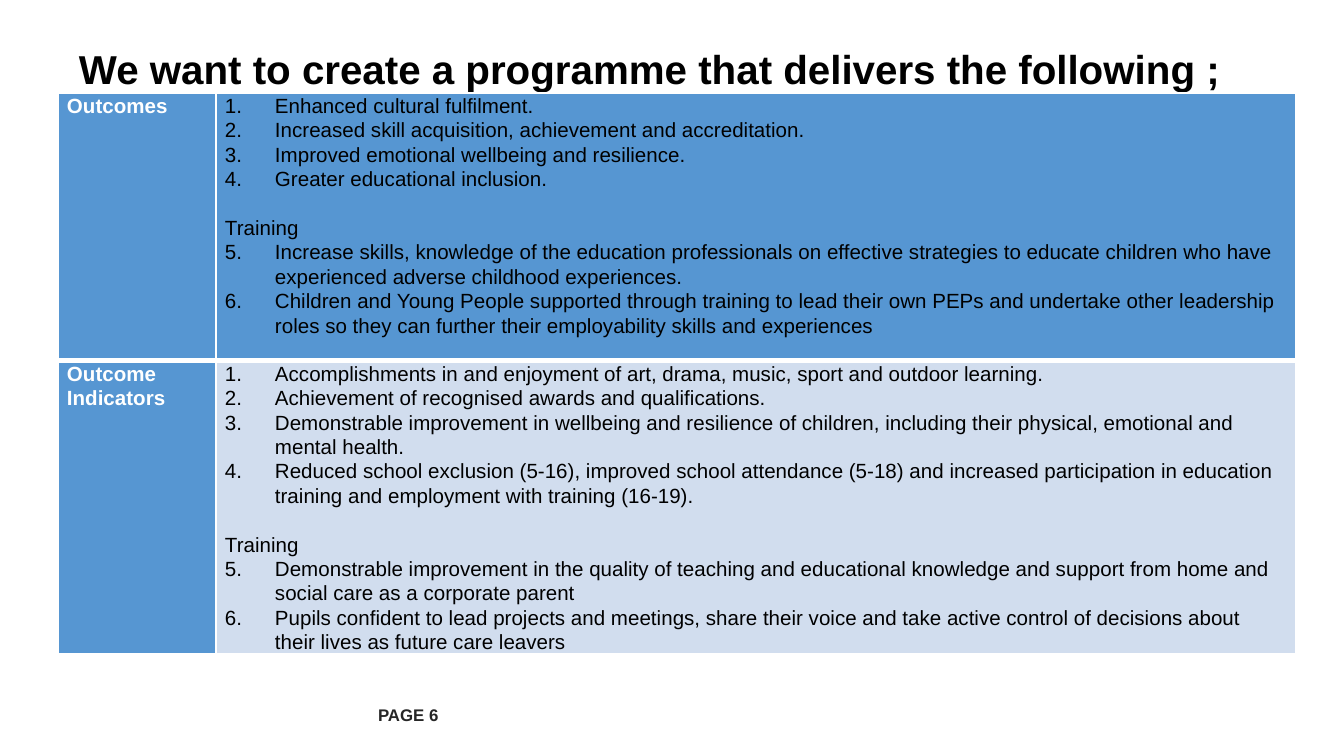
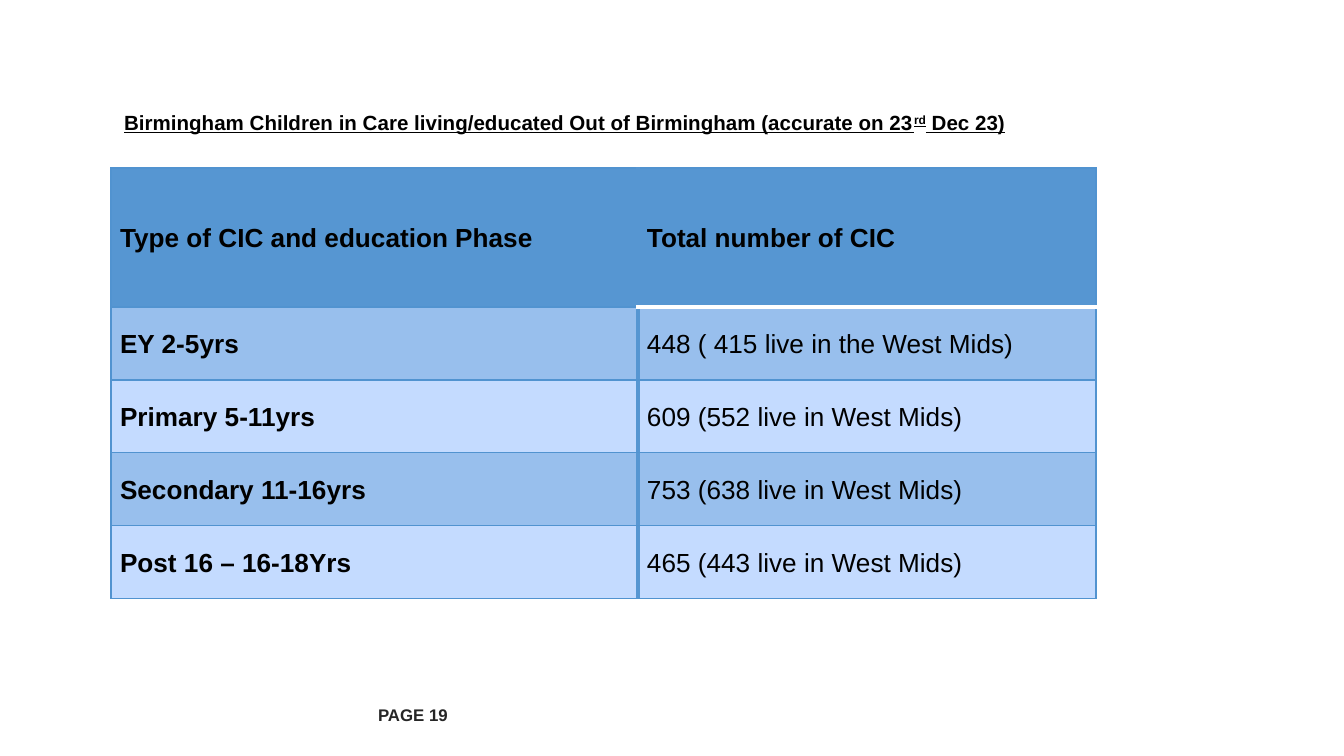
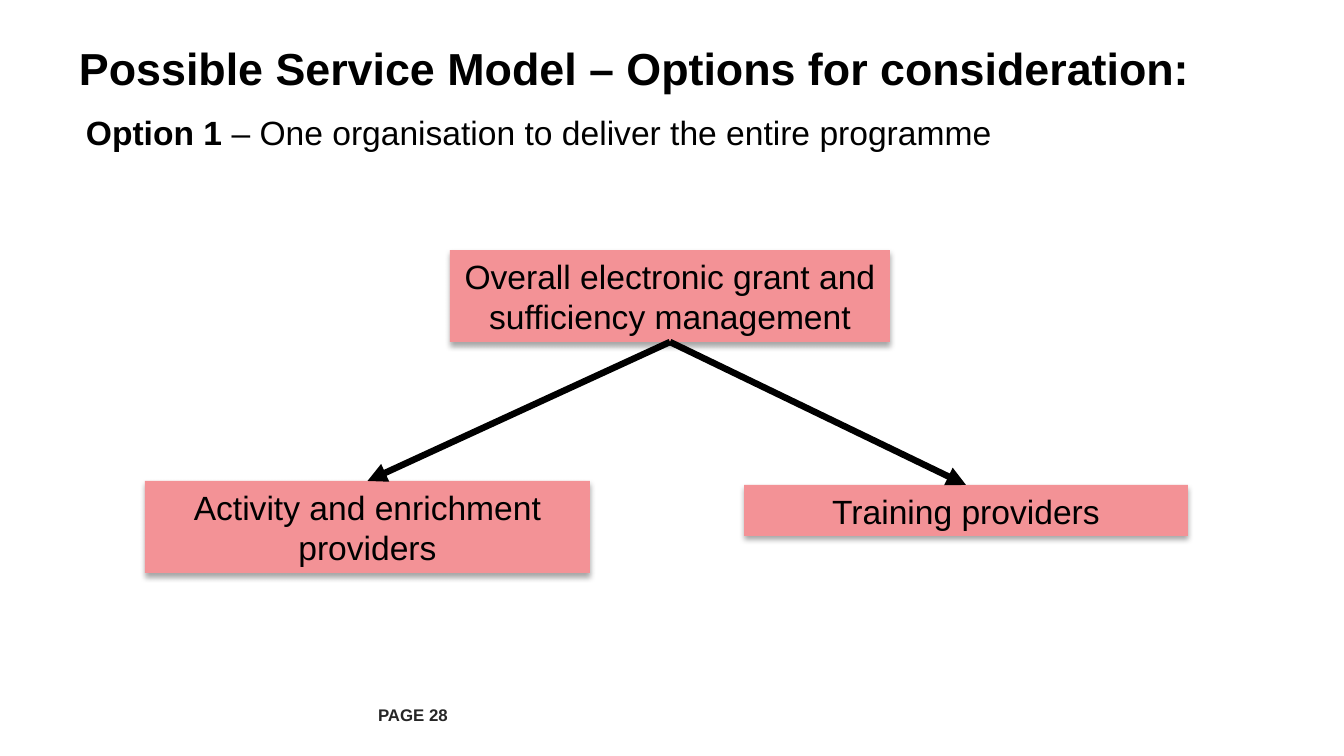
from dataclasses import dataclass
from typing import NamedTuple

from lxml.etree import SubElement
from pptx import Presentation
from pptx.dml.color import RGBColor
from pptx.enum.shapes import MSO_CONNECTOR as Connector, MSO_SHAPE as Shape
from pptx.enum.text import MSO_ANCHOR as Anchor, MSO_AUTO_SIZE as AutoSize, PP_ALIGN as Align
from pptx.oxml.ns import qn
from pptx.util import Emu, Pt

EMU_PER_PX = 914400 / 134.4


@dataclass(frozen=True)
class Theme:
    """Colours, font and type sizes shared by the slides."""
    font: str = "Arial"
    ink: str = "000000"
    paper: str = "FFFFFF"
    footer_ink: str = "262626"
    blue: str = "5696D2"
    rule_blue: str = "5193D0"
    pale_blue: str = "D1DDEE"
    band_dark: str = "98BFED"
    band_light: str = "C4DBFF"
    pink: str = "F39296"
    title: float = 24
    long_title: float = 21.6
    body: float = 18
    table: float = 14
    small: float = 11
    footer: float = 9
    line_spacing: float = 1.07


THEME = Theme()


class Box(NamedTuple):
    """A rectangle in px."""
    left: int
    top: int
    width: int
    height: int

    def emu(self):
        """Return the four lengths in EMU."""
        return [px(length) for length in self]

    def inner(self, left, top, width, height):
        """Return a box placed relative to this one."""
        return Box(self.left + left, self.top + top, width, height)


SLIDE = Box(0, 0, 1344, 756)
TITLE = Box(67, 31, 1210, 74)
FOOTER = Box(366, 695, 117, 40)

OUTCOMES = [
    ("Outcomes", THEME.blue, 268, [
        "Enhanced cultural fulfilment.",
        "Increased skill acquisition, achievement and accreditation.",
        "Improved emotional wellbeing and resilience.",
        "Greater educational inclusion.",
    ], [
        "Increase skills, knowledge of the education professionals on effective strategies "
        "to educate children who have experienced adverse childhood experiences.",
        "Children and Young People supported through training to lead their own PEPs and "
        "undertake other leadership roles so they can further their employability skills "
        "and experiences",
    ]),
    ("Outcome Indicators", THEME.blue, 293, [
        "Accomplishments in and enjoyment of art, drama, music, sport and outdoor learning.",
        "Achievement of recognised awards and qualifications.",
        "Demonstrable improvement in wellbeing and resilience of children, including their "
        "physical, emotional and mental health.",
        "Reduced school exclusion (5-16), improved school attendance (5-18) and increased "
        "participation in education training and employment with training (16-19).",
    ], [
        "Demonstrable improvement in the quality of teaching and educational knowledge and "
        "support from home and social care as a corporate parent",
        "Pupils confident to lead projects and meetings, share their voice and take active "
        "control of decisions about their lives as future care leavers",
    ]),
]
OUTCOME_FILLS = [THEME.blue, THEME.pale_blue]

CARE_NUMBERS = [
    ("Type of CIC and education Phase", "Total number of CIC"),
    ("EY 2-5yrs", "448 ( 415 live in the West Mids)"),
    ("Primary 5-11yrs", "609 (552 live in West Mids)"),
    ("Secondary 11-16yrs", "753 (638 live in West Mids)"),
    ("Post 16 – 16-18Yrs", "465 (443 live in West Mids)"),
]


def px(length):
    """Turn px into EMU."""
    return Emu(round(length * EMU_PER_PX))


def write(paragraph, text, size=THEME.body, color=THEME.ink, bold=False,
          underline=False, baseline=0, align=Align.LEFT):
    """Add a formatted run of text to a paragraph."""
    paragraph.alignment = align
    run = paragraph.add_run()
    run.text = text
    font = run.font
    font.name, font.size, font.bold = THEME.font, Pt(size), bold
    font.color.rgb = RGBColor.from_string(color)
    if underline:
        font.underline = True
    if baseline:
        run._r.get_or_add_rPr().set("baseline", str(baseline * 1000))


def set_frame(frame, across=13, down=7, anchor=Anchor.TOP):
    """Set wrapping, insets and anchor, and return the first paragraph."""
    frame.word_wrap = True
    frame.auto_size = AutoSize.NONE
    frame.margin_left = frame.margin_right = px(across)
    frame.margin_top = frame.margin_bottom = px(down)
    frame.vertical_anchor = anchor
    return frame.paragraphs[0]


def add_slide(deck, page, title_box=TITLE, **insets):
    """Add a slide with its footer and return it with its title paragraph."""
    slide = deck.slides.add_slide(deck.slide_layouts[5])
    title = slide.shapes.title
    title.left, title.top, title.width, title.height = title_box.emu()
    footer = slide.shapes.add_textbox(*FOOTER.emu())
    write(set_frame(footer.text_frame, 12, 6, Anchor.MIDDLE), f"PAGE {page}",
          size=THEME.footer, color=THEME.footer_ink, bold=True)
    return slide, set_frame(title.text_frame, anchor=Anchor.MIDDLE, **insets)


def add_grid(slide, box, columns, rows):
    """Add a table with the given column widths and row heights."""
    grid = slide.shapes.add_table(len(rows), len(columns), *box.emu()).table
    grid.horz_banding = False
    for column, width in zip(grid.columns, columns):
        column.width = px(width)
    for row, height in zip(grid.rows, rows):
        row.height = px(height)
    return grid


def style_cell(cell, fill, borders, anchor=Anchor.TOP):
    """Set borders as {side: (colour, points)}, fill, margins and anchor."""
    properties = cell._tc.get_or_add_tcPr()
    for side in "LRTB":
        color, width = borders[side]
        line = SubElement(properties, qn(f"a:ln{side}"), w=str(Pt(width)))
        SubElement(SubElement(line, qn("a:solidFill")), qn("a:srgbClr"), val=color)
    cell.fill.solid()
    cell.fill.fore_color.rgb = RGBColor.from_string(fill)
    cell.margin_left = cell.margin_right = px(9)
    cell.margin_top = cell.margin_bottom = 0
    cell.vertical_anchor = anchor


def write_label(cell, text, **style):
    """Write a one-paragraph cell."""
    paragraph = cell.text_frame.paragraphs[0]
    paragraph.line_spacing = THEME.line_spacing
    paragraph.space_after = Pt(8)
    write(paragraph, text, **style)


def number_paragraph(paragraph, start):
    """Give a paragraph a hanging automatic number."""
    properties = paragraph._p.get_or_add_pPr()
    properties.set("marL", str(px(50)))
    properties.set("indent", str(-px(50)))
    SubElement(properties, qn("a:buFont"), typeface="+mj-lt")
    SubElement(properties, qn("a:buAutoNum"), type="arabicPeriod", startAt=str(start))


def write_goals(frame, general, training):
    """Write numbered goals, a training heading and the goals that continue the count."""
    first_training = len(general) + 1
    lines = [(text, 1) for text in general] + [("Training", None)]
    lines += [(text, first_training) for text in training]
    for index, (text, start) in enumerate(lines):
        paragraph = frame.add_paragraph() if index else frame.paragraphs[0]
        paragraph.line_spacing = THEME.line_spacing
        if start:
            number_paragraph(paragraph, start)
        else:
            paragraph.space_before = Pt(13)
        write(paragraph, text, size=THEME.small)


def add_outcomes(slide, box):
    """Add the table of outcomes and their indicators."""
    label_width = 158
    grid = add_grid(slide, box, [label_width, box.width - label_width],
                    [height for _, _, height, _, _ in OUTCOMES])
    grid.first_row, grid.first_col = False, True
    thin, thick = (THEME.paper, 1), (THEME.paper, 3)
    for row, (label, label_fill, _, general, training) in enumerate(OUTCOMES):
        borders = dict(L=thin, R=thin, T=thick if row else thin, B=thin if row else thick)
        style_cell(grid.cell(row, 0), label_fill, borders)
        style_cell(grid.cell(row, 1), OUTCOME_FILLS[row], borders)
        write_label(grid.cell(row, 0), label, size=THEME.small, color=THEME.paper, bold=True)
        write_goals(grid.cell(row, 1).text_frame, general, training)


def add_care_numbers(slide, box):
    """Add the table of children in care by education phase."""
    phase_width, header_height = 527, 139
    body_rows = len(CARE_NUMBERS) - 1
    row_height = (box.height - header_height) // body_rows
    grid = add_grid(slide, box, [phase_width, box.width - phase_width],
                    [header_height] + [row_height] * body_rows)
    grid.first_col = True
    thin, divider, header_rule = (THEME.rule_blue, 0.75), (THEME.blue, 2), (THEME.paper, 2)
    for row, texts in enumerate(CARE_NUMBERS):
        fill = (THEME.band_dark if row % 2 else THEME.band_light) if row else THEME.blue
        for column, text in enumerate(texts):
            borders = dict(L=divider if column else thin, R=thin if column else divider,
                           T=thin, B=thin)
            if column and row < 2:
                borders["T" if row else "B"] = header_rule
            cell = grid.cell(row, column)
            style_cell(cell, fill, borders, Anchor.MIDDLE)
            write_label(cell, text, size=THEME.table, bold=row == 0 or column == 0)


def add_role(slide, box, text):
    """Add a pink role box with a soft shadow."""
    role = slide.shapes.add_shape(Shape.RECTANGLE, *box.emu())
    role.fill.solid()
    role.fill.fore_color.rgb = RGBColor.from_string(THEME.pink)
    role.line.fill.background()
    effects = SubElement(role._element.spPr, qn("a:effectLst"))
    shadow = SubElement(effects, qn("a:outerShdw"), blurRad=str(Pt(3.1)), dist=str(Pt(1.8)),
                        dir="5400000", rotWithShape="0")
    shade = SubElement(shadow, qn("a:srgbClr"), val=THEME.ink)
    SubElement(shade, qn("a:alpha"), val="35000")
    write(set_frame(role.text_frame, 9, 6), text, align=Align.CENTER)
    return role


def add_arrow(slide, manager, provider):
    """Link the bottom of one role to the top of another."""
    arrow = slide.shapes.add_connector(Connector.STRAIGHT, 0, 0, 0, 0)
    arrow.begin_connect(manager, 2)
    arrow.end_connect(provider, 0)
    arrow.line.color.rgb = RGBColor.from_string(THEME.ink)
    arrow.line.width = Pt(3.5)
    SubElement(arrow.line._get_or_add_ln(), qn("a:tailEnd"), type="triangle")
    SubElement(arrow._element.spPr, qn("a:effectLst"))


def add_service_model(slide, box):
    """Add the managing role and the two providers under it."""
    manager = add_role(slide, box.inner(305, 0, 440, 92),
                       "Overall electronic grant and sufficiency management")
    providers = [
        add_role(slide, box.inner(0, 231, 445, 92), "Activity and enrichment providers"),
        add_role(slide, box.inner(599, 235, 444, 51), "Training providers"),
    ]
    for provider in providers:
        add_arrow(slide, manager, provider)


def build_outcomes_slide(deck):
    """Build the slide of programme outcomes."""
    slide, title = add_slide(deck, 6, across=12, down=6)
    write(title, "We want to create a programme that delivers the following ;",
          size=THEME.long_title, bold=True)
    add_outcomes(slide, Box(58, 93, 1238, 561))


def build_care_slide(deck):
    """Build the slide of children in care outside the city."""
    slide, title = add_slide(deck, 19, Box(111, 89, 1200, 67))
    heading = dict(size=THEME.small, bold=True, underline=True)
    write(title, "Birmingham Children in Care living/educated Out of Birmingham "
          "(accurate on 23", **heading)
    write(title, "rd", baseline=30, **heading)
    write(title, " Dec 23)", **heading)
    add_care_numbers(slide, Box(111, 168, 985, 431))


def build_model_slide(deck):
    """Build the slide of the first service model."""
    slide, title = add_slide(deck, 28, across=12, down=6)
    write(title, "Possible Service Model – Options for consideration:",
          size=THEME.title, bold=True)
    option = slide.shapes.add_textbox(*Box(73, 105, 1195, 54).emu())
    paragraph = set_frame(option.text_frame)
    write(paragraph, "Option 1 ", bold=True)
    write(paragraph, "– One organisation to deliver the entire programme")
    add_service_model(slide, Box(145, 250, 1043, 323))


def main():
    """Build and save the presentation."""
    deck = Presentation()
    deck.slide_width, deck.slide_height = px(SLIDE.width), px(SLIDE.height)
    build_outcomes_slide(deck)
    build_care_slide(deck)
    build_model_slide(deck)
    deck.save("out.pptx")


if __name__ == "__main__":
    main()
